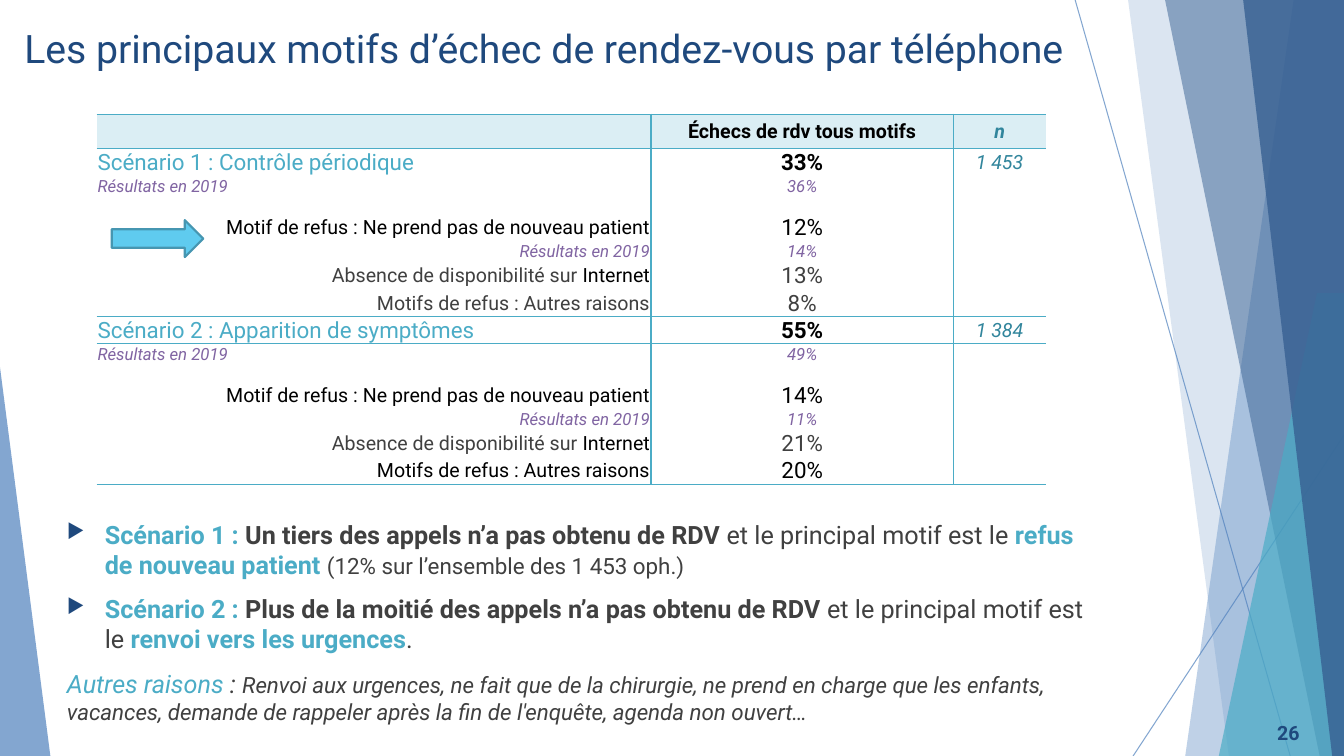
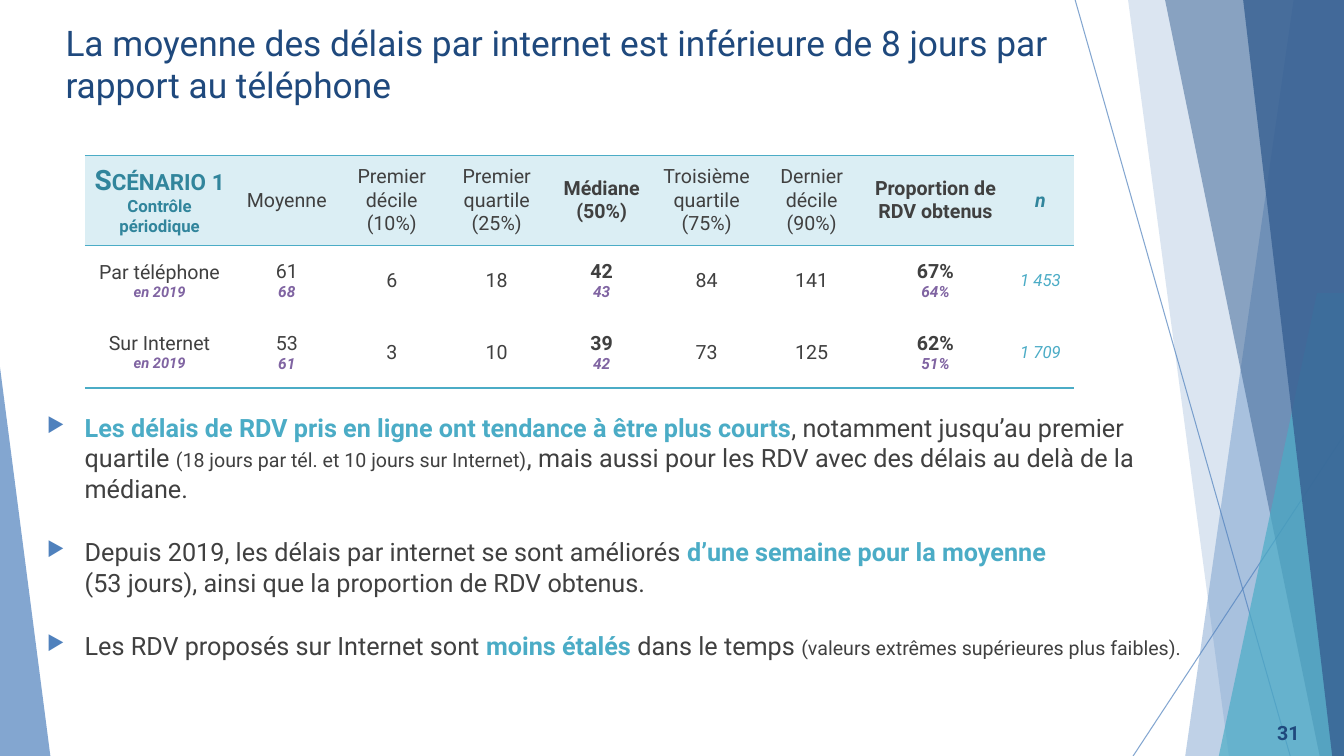
"""Build two slides on appointment failures and waiting times."""
from itertools import product
from lxml.etree import SubElement as Sub
from pptx import Presentation
from pptx.dml.color import RGBColor as RGB
from pptx.enum.shapes import MSO_CONNECTOR as Link, MSO_SHAPE as Kind
from pptx.enum.text import MSO_ANCHOR as Anchor, MSO_AUTO_SIZE as Fit, PP_ALIGN as Align
from pptx.oxml.ns import qn
from pptx.util import Emu, Pt


class Theme:
    font = "Roboto"
    size = {"title": 28, "long": 25.2, "cap": 20, "lead": 18, "text": 16,
            "cell": 14, "note": 12, "mini": 11, "tiny": 10.5}
    tone = {name: RGB.from_string(code) for name, code in {
        "ink": "1F497D", "grey": "404040", "black": "000000", "teal": "4BACC6",
        "deep": "31859C", "violet": "8064A2", "pale": "DBEEF4", "blue": "4F81BD",
        "navy": "376092", "sky": "5FCBEF", "rim": "4696B1"}.items()}
    plain = "{2D5ABB26-0587-4C30-8999-92F81FD0307C}"


deck = Presentation()
deck.slide_width, deck.slide_height = Emu(12192000), Emu(6858000)
COLS, ROWS = 160, 90
unit = deck.slide_width / COLS


def at(*cells):
    return [Emu(round(cell * unit)) for cell in cells]


def write(par, parts):
    par.font.name = Theme.font
    for text, look in parts:
        if text == "\n":
            par.add_line_break()
            continue
        font = par.font
        if text:
            run = par.add_run()
            run.text = text
            font = font if len(parts) == 1 else run.font
        size, tone, *flags = look.split()
        font.size = Pt(Theme.size[size])
        font.color.rgb = Theme.tone[tone]
        font.bold, font.italic = "b" in flags, "i" in flags
        if "caps" in flags:
            font._rPr.set("cap", "small")


L, C, R = Align.LEFT, Align.CENTER, Align.RIGHT
MID, TOP = Anchor.MIDDLE, Anchor.TOP
void = (L, [[("", "tiny grey")]])

causes = [(4.1, MID, "tb", "pale", [
    void,
    (C, [[("Échecs de rdv tous motifs", "cell black b")]]),
    (C, [[("n", "cell deep bi b i")]])])]
for name, count, rates, last, edge in [
        ("Scénario 1 : Contrôle périodique", "1 453", "33% 36% 12% 14% 13% 8%", "grey", ""),
        ("Scénario 2 : Apparition de symptômes", "1 384", "55% 49% 14% 11% 21% 20%", "black", "b")]:
    past = ("Résultats en 2019", "note violet i")
    lines = [
        (3.25, MID, edge, L, [(name, "text teal")], "text black b"),
        (4.5, TOP, "", L, [past], "note violet i"),
        (3.25, MID, "", R, [("Motif de refus : Ne prend pas de nouveau patient", "cell black")], "text black"),
        (2.5, MID, "", R, [past], "note violet i"),
        (3.25, MID, "", R, [("Absence de disponibilité sur ", "cell grey"), ("Internet", "cell black")], "text grey"),
        (3.25, MID, "b", R, [("Motifs de refus : Autres raisons", f"cell {last}")], f"text {last}")]
    for step, (line, rate) in enumerate(zip(lines, rates.split())):
        high, hold, edges, side, parts, look = line
        total = void if step else (C, [[(count, "cell deep i")]])
        causes.append((high, hold, edges, None, [(side, [parts]), (C, [[(rate, look)]]), total]))

heads = [("Moyenne", ""), ("Premier décile (10%)", ""), ("Premier quartile (25%)", ""),
         ("Médiane (50%)", "b"), ("Troisième quartile (75%)", ""),
         ("Dernier décile (90%)", ""), ("Proportion de RDV obtenus", "b")]
delays = [(10.7, MID, "tb", "pale", [
    (C, [[("Scénario 1", "cap deep b caps")], [("Contrôle périodique", "note deep b")]]),
    *[(C, [[(text, f"cell grey {flag}")]]) for text, flag in heads],
    (C, [[("n", "cell deep b i")]])])]
for name, edge, count, now, old in [
        ("Par téléphone", "", "1 453", "61 6 18 42 84 141 67%", "68 - - 43 - - 64%"),
        ("Sur Internet", "b", "1 709", "53 3 10 39 73 125 62%", "61 - - 42 - - 51%")]:
    cells = [(C, [[(name, "cell grey")], [("en 2019", "tiny violet b i")]])]
    for (_, flag), new, past in zip(heads, now.split(), old.split()):
        paras = [[(new, f"cell grey {flag}")]]
        if past != "-":
            paras.append([(past, "mini violet b i")])
        cells.append((C, paras))
    cells.append((C, [[(count, "note teal i")]]))
    delays.append((8.5, MID, edge, None, cells))

pages = [
    dict(title="Les principaux motifs d’échec de rendez-vous par téléphone",
         look="title ink", head=(1.7, 2.3, 135.1, 11.4), num="26",
         spot=(11.5, 13.6), cols=[66, 36, 11], rows=causes, grid=True, pad=(0.12, 0.12),
         body=(6.8, 61.2, 124.6, 28.8), mark="ink", gap=(10, 0),
         text=[
             (True, [("Scénario 1 : ", "lead teal b"),
                     ("Un tiers des appels n’a pas obtenu de RDV ", "lead grey b"),
                     ("et le principal motif est le ", "lead grey"),
                     ("refus de nouveau patient ", "lead teal b"),
                     ("(12% sur l’ensemble des 1 453 oph.)", "text grey")]),
             (True, [("Scénario 2 : ", "lead teal b"),
                     ("Plus de la moitié des appels n’a pas obtenu de RDV ", "lead grey b"),
                     ("et le principal motif est le ", "lead grey"),
                     ("renvoi vers les urgences", "lead teal b"), (".", "lead grey")]),
             (False, [("Autres raisons ", "lead teal i"), (": ", "lead grey i"),
                      ("Renvoi aux urgences, ne fait que de la chirurgie, ne prend en charge que "
                       "les enfants, vacances, demande de rappeler après la fin de l'enquête, "
                       "agenda non ouvert…", "text grey i")])]),
    dict(title="La moyenne des délais par internet est inférieure de 8 jours par rapport au téléphone",
         look="long ink", head=(6.6, 1.9, 128.2, 12.4), num="31",
         spot=(10.1, 18.5), cols=[17.8] + [12.5] * 6 + [17, 8], rows=delays, grid=False, pad=(0.84, 0),
         body=(4.4, 48.5, 138.2, 33.4), mark="blue", gap=(6, 18),
         text=[
             (True, [("Les délais de RDV pris en ligne ont tendance à être plus courts", "lead teal b"),
                     (", notamment jusqu’au premier quartile ", "lead grey"),
                     ("(18 jours par tél. et 10 jours sur Internet)", "cell grey"),
                     (", mais aussi pour les RDV avec des délais au delà de la médiane.", "lead grey")]),
             (True, [("Depuis 2019, les délais par internet se sont améliorés ", "lead grey"),
                     ("d’une semaine pour la moyenne", "lead teal b"), ("\n", ""),
                     ("(53 jours), ainsi que la proportion de RDV obtenus.", "lead grey")]),
             (True, [("Les RDV proposés sur Internet sont ", "lead grey"),
                     ("moins étalés ", "lead teal b"), ("dans le temps ", "lead grey"),
                     ("(valeurs extrêmes supérieures plus faibles).", "cell grey")])])]

rays = [(128, 0, 153.6, ROWS), (COLS, 51.8, 134.9, ROWS)]
bands = [(154, 0, 141.1, "blue", 36), (134.3, 0, 146.3, "blue", 20),
         (138.7, 0, 157.1, "navy", 50), (156.8, 34.9, 145.1, "teal", 70),
         (148, 0, 158.6, "navy", 80)]

for page in pages:
    slide = deck.slides.add_slide(deck.slide_layouts[5])
    shapes = slide.shapes
    title = shapes.title
    title.left, title.top, title.width, title.height = at(*page["head"])
    frame = title.text_frame
    frame.word_wrap, frame.auto_size, frame.vertical_anchor = True, Fit.NONE, TOP
    frame.paragraphs[0].alignment = L
    write(frame.paragraphs[0], [(page["title"], page["look"])])

    clear = []
    for ray in rays:
        line = shapes.add_connector(Link.STRAIGHT, *at(*ray))
        line.line.color.rgb, line.line.width = Theme.tone["blue"], Pt(0.75)
        Sub(line._element.spPr, qn("a:effectLst"))
        clear.append((line, 70))
    for left, top, foot, tone, alpha in bands:
        form = shapes.build_freeform(*at(left, top), scale=1.0)
        form.add_line_segments([at(COLS, top), at(COLS, ROWS), at(foot, ROWS)], close=True)
        band = form.convert_to_shape()
        band.fill.solid()
        band.fill.fore_color.rgb = Theme.tone[tone]
        clear.append((band, alpha))
    wedge = shapes.add_shape(Kind.ISOSCELES_TRIANGLE, *at(0, 43.7, 6, 46.3))
    wedge.adjustments[0] = 0
    wedge.fill.solid()
    wedge.fill.fore_color.rgb = Theme.tone["blue"]
    clear.append((wedge, 70))
    for shape, alpha in clear:
        tint = next(shape._element.spPr.iter(qn("a:srgbClr")))
        Sub(tint, qn("a:alpha")).set("val", str(alpha * 1000))
        if shape._element.tag == qn("p:sp"):
            shape.line.fill.background()
            shape.shadow.inherit = False

    rows, cols = page["rows"], page["cols"]
    size = at(sum(cols), sum(row[0] for row in rows))
    table = shapes.add_table(len(rows), len(cols), *at(*page["spot"]), *size).table
    table.first_row = table.horz_banding = False
    table._tbl.tblPr.find(qn("a:tableStyleId")).text = Theme.plain
    for col, wide in zip(table.columns, at(*cols)):
        col.width = wide
    for row, high in zip(table.rows, at(*[row[0] for row in rows])):
        row.height = high
    for y, x in product(range(len(rows)), range(len(cols))):
        _, hold, edges, tone, cells = rows[y]
        side, paras = cells[x]
        cell = table.cell(y, x)
        cell.vertical_anchor = hold
        pad, lift = at(*page["pad"])
        cell.margin_left = cell.margin_right = pad
        cell.margin_top, cell.margin_bottom = lift, 0
        if page["grid"]:
            edges += "l" * (x > 0) + "r" * (x < len(cols) - 1)
        for edge in "lrtb":
            if edge in edges:
                rule = Sub(cell._tc.get_or_add_tcPr(), qn(f"a:ln{edge.upper()}"), w=str(Pt(1)))
                Sub(Sub(rule, qn("a:solidFill")), qn("a:srgbClr"), val=str(Theme.tone["teal"]))
        if tone:
            cell.fill.solid()
            cell.fill.fore_color.rgb = Theme.tone[tone]
        else:
            cell.fill.background()
        for n, parts in enumerate(paras):
            par = cell.text_frame.add_paragraph() if n else cell.text_frame.paragraphs[0]
            par.alignment = side
            write(par, parts)

    frame = shapes.add_textbox(*at(*page["body"])).text_frame
    frame.word_wrap = True
    before, after = page["gap"]
    hang = at(4.5)[0]
    for n, (dot, parts) in enumerate(page["text"]):
        par = frame.add_paragraph() if n else frame.paragraphs[0]
        if dot:
            prop = par._p.get_or_add_pPr()
            prop.set("marL", str(hang))
            prop.set("indent", str(-hang))
            Sub(Sub(prop, qn("a:buClr")), qn("a:srgbClr"), val=str(Theme.tone[page["mark"]]))
            Sub(prop, qn("a:buSzPct"), val="80000")
            Sub(prop, qn("a:buChar"), char="▶")
        par.space_before, par.space_after = Pt(before if n else 0), Pt(after)
        write(par, parts)

    frame = shapes.add_textbox(*at(146.9, 84.8, 9, 4.8)).text_frame
    frame.word_wrap, frame.vertical_anchor = True, MID
    frame.paragraphs[0].alignment = R
    write(frame.paragraphs[0], [(page["num"], "cell ink b")])

arrow = deck.slides[0].shapes.add_shape(Kind.RIGHT_ARROW, *at(13.3, 26.2, 10.9, 4.4))
arrow.shadow.inherit = False
arrow.fill.solid()
arrow.fill.fore_color.rgb = Theme.tone["sky"]
arrow.line.color.rgb, arrow.line.width = Theme.tone["rim"], Pt(1.5)

deck.save("out.pptx")
